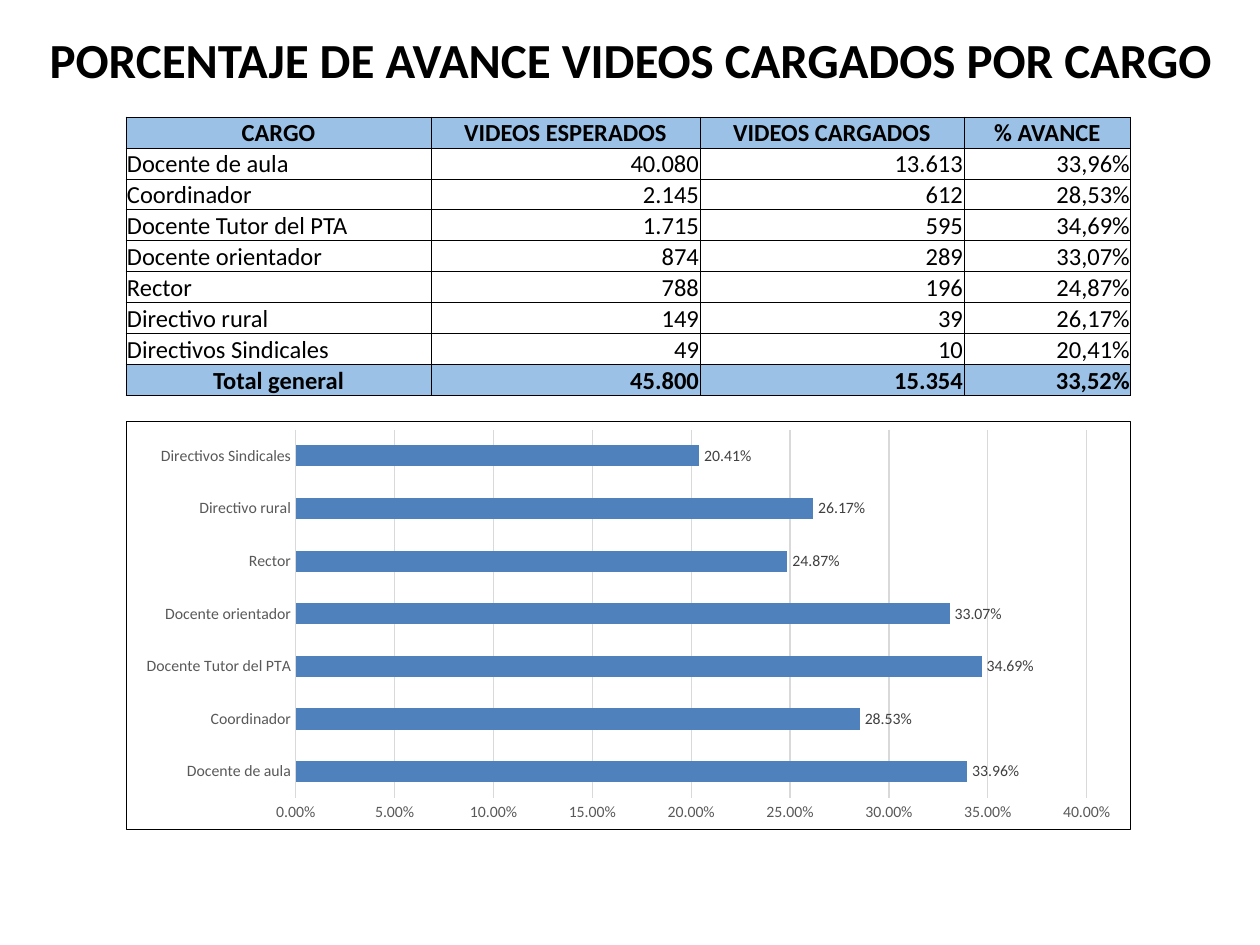
from typing import NamedTuple

from lxml.etree import SubElement
from pptx import Presentation
from pptx.chart.data import CategoryChartData
from pptx.dml.color import RGBColor
from pptx.enum.chart import XL_CHART_TYPE, XL_LABEL_POSITION, XL_TICK_MARK
from pptx.enum.shapes import MSO_SHAPE
from pptx.enum.text import MSO_ANCHOR, PP_ALIGN
from pptx.oxml import parse_xml
from pptx.oxml.ns import nsdecls, qn
from pptx.util import Emu, Pt

FONT = "Calibri"
BLUE = "9BC2E6"
HEADS = ["CARGO", "VIDEOS ESPERADOS", "VIDEOS CARGADOS", "% AVANCE"]
WIDTHS = [305, 269, 264, 167]
ROW = 31


class Post(NamedTuple):
    name: str
    goal: str
    done: str
    rate: float

    def cells(self) -> list[str]:
        rate = f"{self.rate:.2%}".replace(".", ",")
        return [self.name, self.goal, self.done, rate]


POSTS = [
    Post("Docente de aula", "40.080", "13.613", 0.3396),
    Post("Coordinador", "2.145", "612", 0.2853),
    Post("Docente Tutor del PTA", "1.715", "595", 0.3469),
    Post("Docente orientador", "874", "289", 0.3307),
    Post("Rector", "788", "196", 0.2487),
    Post("Directivo rural", "149", "39", 0.2617),
    Post("Directivos Sindicales", "49", "10", 0.2041),
]
TOTAL = Post("Total general", "45.800", "15.354", 0.3352)


def px(n: int) -> Emu:
    return Emu(round(n * 914400 / 126))


def color(code: str) -> RGBColor:
    return RGBColor.from_string(code)


def style(font, size: int, code: str, bold: bool = False) -> None:
    font.name = FONT
    font.size = Pt(size)
    font.bold = bold
    font.color.rgb = color(code)


def write(frame, text: str, *, size: int, bold: bool = False,
          align=PP_ALIGN.LEFT, code: str = "000000") -> None:
    para = frame.paragraphs[0]
    para.alignment = align
    run = para.add_run()
    run.text = text
    style(run.font, size, code, bold)


def border(cell) -> None:
    props = cell._tc.get_or_add_tcPr()
    for side in ("lnL", "lnR", "lnT", "lnB"):
        line = SubElement(props, qn(f"a:{side}"), w=str(Pt(0.5)))
        fill = SubElement(line, qn("a:solidFill"))
        SubElement(fill, qn("a:srgbClr"), val="000000")


def put(cell, text: str, bold: bool, align) -> None:
    border(cell)
    cell.margin_left = cell.margin_right = cell.margin_top = px(1)
    cell.margin_bottom = 0
    cell.vertical_anchor = MSO_ANCHOR.BOTTOM
    if bold:
        cell.fill.solid()
        cell.fill.fore_color.rgb = color(BLUE)
    else:
        cell.fill.background()
    write(cell.text_frame, text, size=14, bold=bold, align=align)


def title(slide) -> None:
    box = slide.shapes.add_shape(
        MSO_SHAPE.ROUND_2_DIAG_RECTANGLE, px(1), px(27), px(1259), px(64))
    box.shadow.inherit = False
    box.fill.solid()
    box.fill.fore_color.rgb = color("FFFFFF")
    box.line.fill.background()
    frame = box.text_frame
    frame.word_wrap = True
    frame.vertical_anchor = MSO_ANCHOR.MIDDLE
    write(frame, "PORCENTAJE DE AVANCE VIDEOS CARGADOS POR CARGO",
          size=28, bold=True, align=PP_ALIGN.CENTER)


def grid(slide) -> None:
    rows = [HEADS, *(post.cells() for post in POSTS), TOTAL.cells()]
    table = slide.shapes.add_table(
        len(rows), len(HEADS), px(126), px(117),
        px(sum(WIDTHS)), px(ROW * len(rows))).table
    table.first_row = table.horz_banding = False
    for col, width in zip(table.columns, WIDTHS):
        col.width = px(width)
    last = len(rows) - 1
    for r, texts in enumerate(rows):
        table.rows[r].height = px(ROW)
        bold = r in (0, last)
        for c, text in enumerate(texts):
            if r == 0 or (r == last and c == 0):
                align = PP_ALIGN.CENTER
            else:
                align = PP_ALIGN.RIGHT if c else PP_ALIGN.LEFT
            put(table.cell(r, c), text, bold, align)


def frame(chart) -> None:
    box = parse_xml(
        f'<c:spPr {nsdecls("c", "a")}>'
        '<a:solidFill><a:srgbClr val="FFFFFF"/></a:solidFill>'
        f'<a:ln w="{Pt(0.75)}"><a:solidFill><a:srgbClr val="000000"/>'
        '</a:solidFill></a:ln></c:spPr>')
    chart._chartSpace.find(qn("c:chart")).addnext(box)


def bars(slide) -> None:
    data = CategoryChartData(number_format="0.00%")
    data.categories = [post.name for post in POSTS]
    data.add_series("Series 1", [post.rate for post in POSTS])
    chart = slide.shapes.add_chart(
        XL_CHART_TYPE.BAR_CLUSTERED, px(126), px(421),
        px(sum(WIDTHS)), px(409), data).chart
    chart.has_legend = chart.has_title = False
    style(chart.font, 10, "000000")
    frame(chart)

    for axis in (chart.category_axis, chart.value_axis):
        axis.major_tick_mark = axis.minor_tick_mark = XL_TICK_MARK.NONE
        axis.format.line.fill.background()
        style(axis.tick_labels.font, 9, "595959")
    axis = chart.value_axis
    axis.minimum_scale = 0
    axis.maximum_scale = 0.4
    axis.major_unit = 0.05
    axis.tick_labels.number_format = "0.00%"
    axis.tick_labels.number_format_is_linked = False
    line = axis.major_gridlines.format.line
    line.width = Pt(0.75)
    line.color.rgb = color("D9D9D9")

    plot = chart.plots[0]
    plot.gap_width = 150
    plot.vary_by_categories = False
    series = plot.series[0]
    series.format.fill.solid()
    series.format.fill.fore_color.rgb = color("4F81BD")
    labels = series.data_labels
    labels.show_value = True
    labels.position = XL_LABEL_POSITION.OUTSIDE_END
    labels.number_format = "0.00%"
    labels.number_format_is_linked = False
    style(labels.font, 9, "404040")


def main() -> None:
    deck = Presentation()
    deck.slide_width, deck.slide_height = px(1260), px(945)
    slide = deck.slides.add_slide(deck.slide_layouts[6])
    title(slide)
    grid(slide)
    bars(slide)
    deck.save("out.pptx")


if __name__ == "__main__":
    main()
